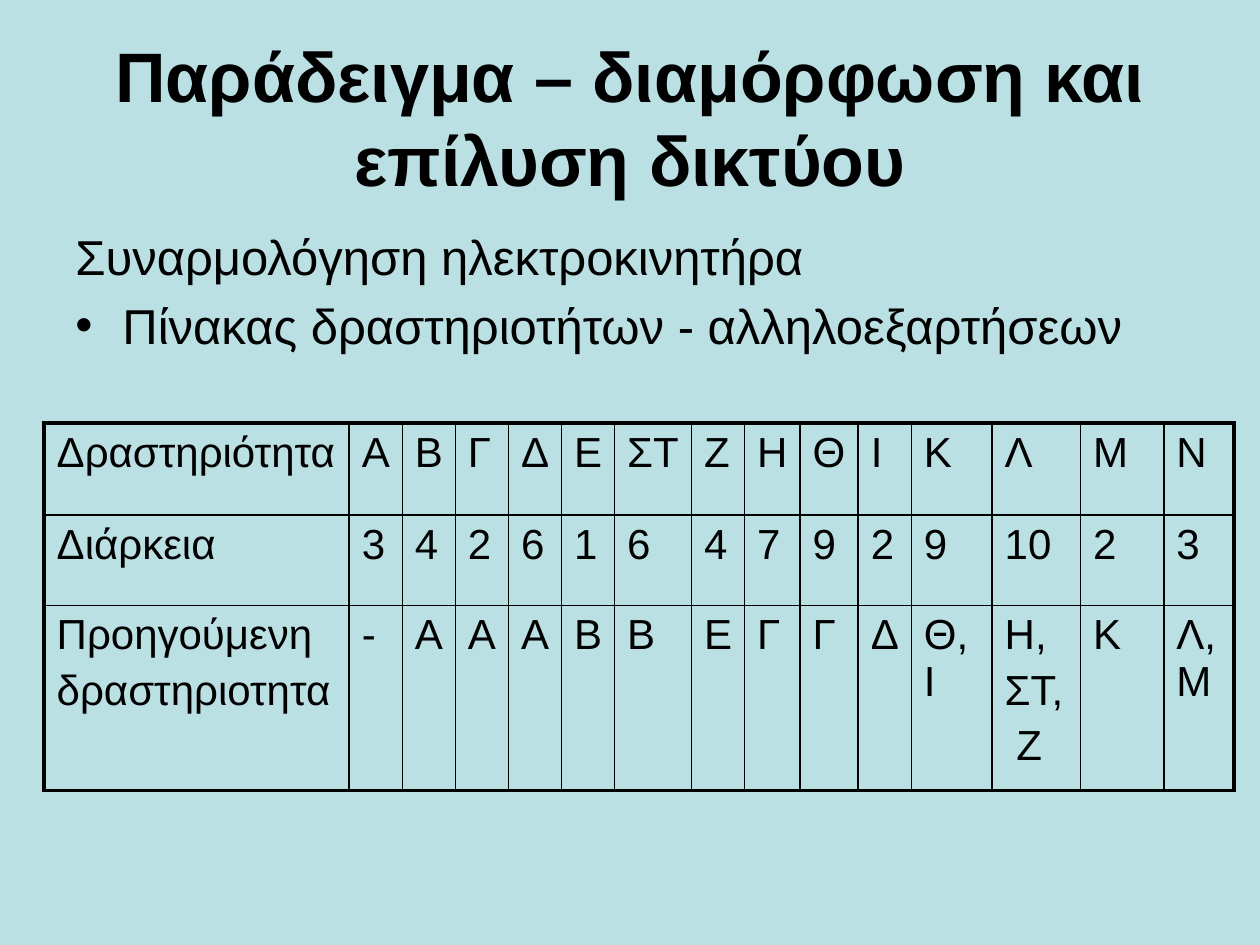
from lxml import etree
from pptx import Presentation
from pptx import util as u
from pptx.dml.color import RGBColor
from pptx.enum import text
from pptx.oxml import ns

COLORS = {"background": "BBE0E3", "ink": "000000"}
FONT = "Arial"
THIN, THICK = u.Pt(1), u.Pt(2.25)
COLUMN_WIDTHS = [6.15] + [1.07] * 5 + [1.55, 1.07, 1.12, 1.17, 1.07, 1.63, 1.78, 1.68, 1.42]
ROW_HEIGHTS = [1.85, 1.83, 3.73]
ACTIVITIES = [
    ["Δραστηριότητα", "Α", "Β", "Γ", "Δ", "Ε", "ΣΤ", "Ζ", "Η", "Θ", "Ι", "Κ", "Λ", "Μ", "Ν"],
    ["Διάρκεια", "3", "4", "2", "6", "1", "6", "4", "7", "9", "2", "9", "10", "2", "3"],
    ["Προηγούμενη\nδραστηριοτητα", "-", "Α", "Α", "Α", "Β", "Β", "Ε", "Γ", "Γ", "Δ",
     "Θ,Ι", "Η,\nΣΤ,\n Ζ", "Κ", "Λ,Μ"],
]


def format_text(tf, size, bold=False, spacing=0.2):
    for p in tf.paragraphs:
        p.space_before = u.Pt(size * spacing)
        for r in p.runs:
            r.font.name = FONT
            r.font.size = u.Pt(size)
            r.font.bold = bold
            r.font.color.rgb = RGBColor.from_string(COLORS["ink"])


def add_text(s, box, content):
    tf = s.shapes.add_textbox(*map(u.Cm, box)).text_frame
    tf.word_wrap = True
    tf.text = content
    return tf


def add_title(s, box):
    tf = add_text(s, box, "Παράδειγμα – διαμόρφωση και επίλυση δικτύου")
    tf.vertical_anchor = text.MSO_ANCHOR.MIDDLE
    tf.paragraphs[0].alignment = text.PP_ALIGN.CENTER
    format_text(tf, 40, bold=True, spacing=0)


def add_body(s, box):
    tf = add_text(s, box, "Συναρμολόγηση ηλεκτροκινητήρα\nΠίνακας δραστηριοτήτων - αλληλοεξαρτήσεων")
    format_text(tf, 28)
    pPr = tf.paragraphs[1]._p.get_or_add_pPr()
    pPr.set("marL", str(u.Cm(0.95)))
    pPr.set("indent", str(u.Cm(-0.95)))
    etree.SubElement(pPr, ns.qn("a:buFont"), typeface=FONT)
    etree.SubElement(pPr, ns.qn("a:buChar"), char="•")


def set_borders(cell, widths):
    tcPr = cell._tc.get_or_add_tcPr()
    for i, (side, width) in enumerate(widths.items()):
        line = etree.Element(ns.qn(f"a:ln{side}"), w=str(width))
        fill = etree.SubElement(line, ns.qn("a:solidFill"))
        etree.SubElement(fill, ns.qn("a:srgbClr"), val=COLORS["ink"])
        tcPr.insert(i, line)


def add_activity_table(s, left, top):
    rows, cols = len(ROW_HEIGHTS), len(COLUMN_WIDTHS)
    size = sum(COLUMN_WIDTHS), sum(ROW_HEIGHTS)
    table = s.shapes.add_table(rows, cols, *map(u.Cm, (left, top, *size))).table
    table.first_row = table.horz_banding = False
    for column, width in zip(table.columns, COLUMN_WIDTHS):
        column.width = u.Cm(width)
    for row, height in zip(table.rows, ROW_HEIGHTS):
        row.height = u.Cm(height)
    for i, values in enumerate(ACTIVITIES):
        for j, value in enumerate(values):
            cell = table.cell(i, j)
            cell.text_frame.text = value
            format_text(cell.text_frame, 24)
            cell.fill.background()
            outer = {"L": j == 0, "R": j == cols - 1, "T": i == 0, "B": i == rows - 1}
            set_borders(cell, {side: THICK if edge else THIN for side, edge in outer.items()})


def main():
    prs = Presentation()
    prs.slide_width, prs.slide_height = u.Cm(25.4), u.Cm(19.05)
    s = prs.slides.add_slide(prs.slide_layouts[6])
    s.background.fill.solid()
    s.background.fill.fore_color.rgb = RGBColor.from_string(COLORS["background"])
    add_title(s, (1.27, 0.76, 22.86, 3.18))
    add_body(s, (1.27, 4.45, 24.13, 4.09))
    add_activity_table(s, 0.89, 8.53)
    prs.save("out.pptx")


if __name__ == "__main__":
    main()
